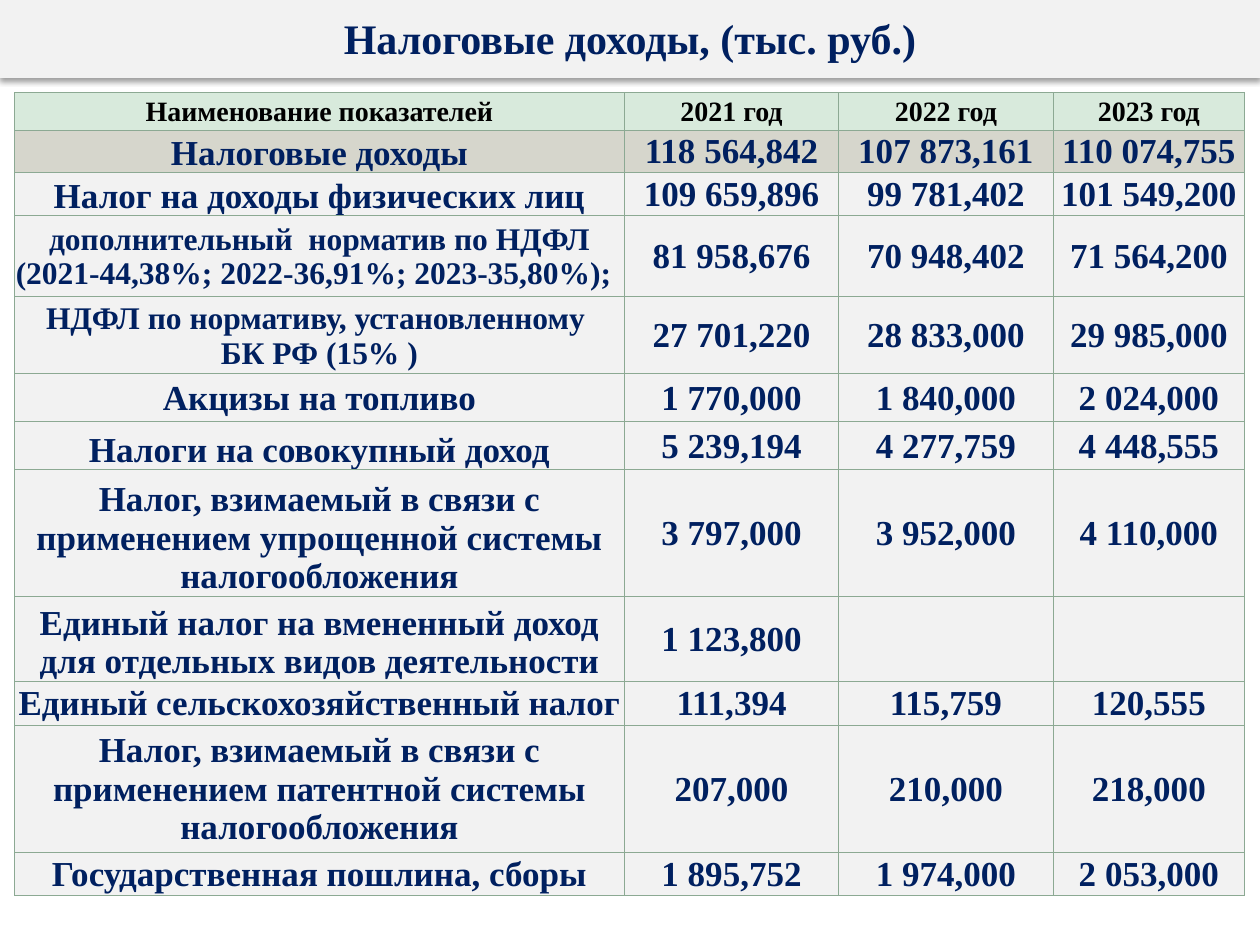
from lxml.etree import SubElement
from pptx import Presentation
from pptx.dml.color import RGBColor
from pptx.enum.text import MSO_ANCHOR, PP_ALIGN
from pptx.oxml import parse_xml
from pptx.oxml.ns import nsdecls, qn
from pptx.util import Pt

FONT = "Times New Roman"
COLORS = {
    "navy": "002060",
    "black": "000000",
    "panel": "F2F2F2",
    "header": "D8EADC",
    "total": "D6D6CC",
    "border": "8CA993",
}
COLUMN_WIDTHS = [348.5, 122.5, 122.5, 109.5]
ROW_HEIGHTS = [21.5, 24.5, 24.5, 46.3, 44, 27.4, 27.4, 72.5, 48.6, 25, 72.5, 24.6]
ROWS = [
    ["Наименование показателей", "2021 год", "2022 год", "2023 год"],
    ["Налоговые доходы", "118 564,842", "107 873,161", "110 074,755"],
    ["Налог на доходы физических лиц", "109 659,896", "99 781,402", "101 549,200"],
    [" дополнительный  норматив по НДФЛ \n(2021-44,38%; 2022-36,91%; 2023-35,80%);",
     "81 958,676", "70 948,402", "71 564,200"],
    ["НДФЛ по нормативу, установленному \nБК РФ (15% )",
     "27 701,220", "28 833,000", "29 985,000"],
    ["Акцизы на топливо", "1 770,000", "1 840,000", "2 024,000"],
    ["Налоги на совокупный доход", "5 239,194", "4 277,759", "4 448,555"],
    ["Налог, взимаемый в связи с применением упрощенной системы налогообложения",
     "3 797,000", "3 952,000", "4 110,000"],
    ["Единый налог на вмененный доход для отдельных видов деятельности",
     "1 123,800", "", ""],
    ["Единый сельскохозяйственный налог", "111,394", "115,759", "120,555"],
    ["Налог, взимаемый в связи с применением патентной системы налогообложения",
     "207,000", "210,000", "218,000"],
    ["Государственная пошлина, сборы", "1 895,752", "1 974,000", "2 053,000"],
]
HEADER_ROW, TOTAL_ROW, EXTRA_RATE_ROW = 0, 1, 3
DETAIL_ROWS = {3, 4}
BOTTOM_ROWS = {1, 2, 6, 7, 8}


def color(name):
    return RGBColor.from_string(COLORS[name])


def fill_solid(item, name):
    item.fill.solid()
    item.fill.fore_color.rgb = color(name)


def format_text(frame, size, name):
    for para in frame.paragraphs:
        para.alignment = PP_ALIGN.CENTER
        for span in para.runs:
            span.font.name = FONT
            span.font.size = Pt(size)
            span.font.bold = True
            span.font.color.rgb = color(name)


def add_shadow(shape):
    shape._element.spPr.append(parse_xml(
        f'<a:effectLst {nsdecls("a")}>'
        f'<a:outerShdw blurRad="{Pt(3.1)}" dist="{Pt(2)}" dir="5400000" '
        'algn="t" rotWithShape="0">'
        f'<a:srgbClr val="{COLORS["black"]}"><a:alpha val="38000"/></a:srgbClr>'
        '</a:outerShdw></a:effectLst>'))


def add_title(page, text):
    title = page.shapes.title
    title.left, title.top, title.width, title.height = Pt(0), Pt(0), Pt(720), Pt(44.6)
    fill_solid(title, "panel")
    add_shadow(title)
    frame = title.text_frame
    frame.text = text
    frame.vertical_anchor = MSO_ANCHOR.TOP
    frame.margin_top = Pt(7)
    frame.margin_bottom = Pt(0)
    format_text(frame, 24, "navy")


def add_borders(cell):
    properties = cell._tc.get_or_add_tcPr()
    for position, side in enumerate(("lnL", "lnR", "lnT", "lnB")):
        line = SubElement(properties, qn(f"a:{side}"), w=str(Pt(0.5)))
        fill = SubElement(line, qn("a:solidFill"))
        SubElement(fill, qn("a:srgbClr"), val=COLORS["border"])
        properties.insert(position, line)


def fill_cell(cell, text, row, column):
    fills = {HEADER_ROW: "header", TOTAL_ROW: "total"}
    fill_solid(cell, fills.get(row, "panel"))
    add_borders(cell)
    cell.margin_left = cell.margin_right = cell.margin_top = Pt(0.72)
    cell.margin_bottom = Pt(0)
    at_bottom = column == 0 and row in BOTTOM_ROWS
    cell.vertical_anchor = MSO_ANCHOR.BOTTOM if at_bottom else MSO_ANCHOR.MIDDLE
    cell.text_frame.text = text
    if row == HEADER_ROW:
        format_text(cell.text_frame, 16, "black")
    else:
        is_detail = column == 0 and row in DETAIL_ROWS
        format_text(cell.text_frame, 18 if is_detail else 20, "navy")


def add_revenue_table(page):
    table = page.shapes.add_table(
        len(ROWS), len(COLUMN_WIDTHS), Pt(8.3), Pt(52.8),
        Pt(sum(COLUMN_WIDTHS)), Pt(sum(ROW_HEIGHTS))).table
    for column, width in zip(table.columns, COLUMN_WIDTHS):
        column.width = Pt(width)
    for row, height in zip(table.rows, ROW_HEIGHTS):
        row.height = Pt(height)
    for row, texts in enumerate(ROWS):
        for column, text in enumerate(texts):
            fill_cell(table.cell(row, column), text, row, column)
    rates = table.cell(EXTRA_RATE_ROW, 0).text_frame.paragraphs[1]
    rates.alignment = PP_ALIGN.LEFT


def main():
    deck = Presentation()
    deck.slide_width, deck.slide_height = Pt(720), Pt(540)
    page = deck.slides.add_slide(deck.slide_layouts[5])
    add_revenue_table(page)
    add_title(page, "Налоговые доходы, (тыс. руб.)")
    deck.save("out.pptx")


if __name__ == "__main__":
    main()
